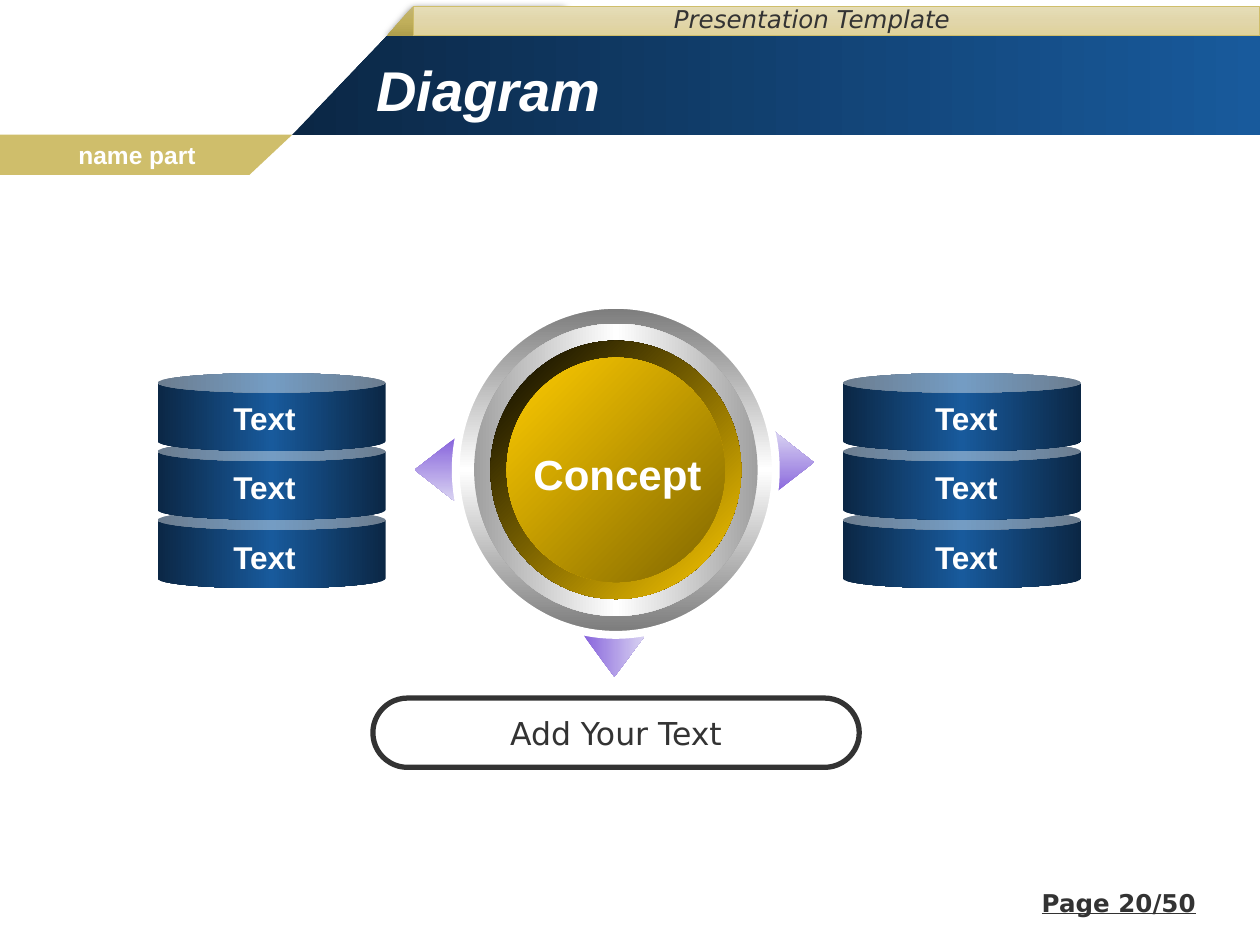
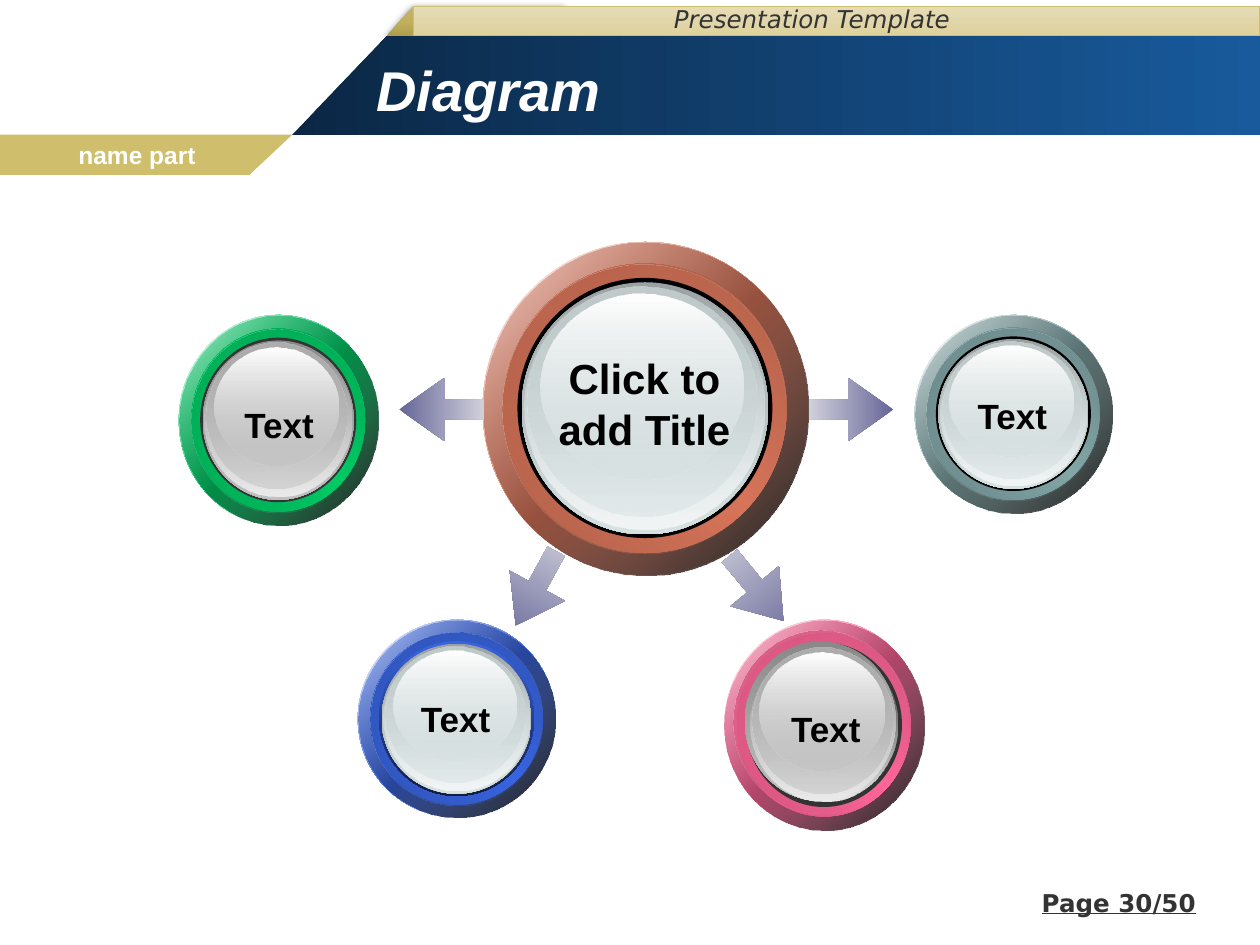
from lxml import etree
from pptx import Presentation
from pptx.dml.color import RGBColor
from pptx.enum.shapes import MSO_SHAPE as Preset
from pptx.enum.text import MSO_ANCHOR as Anchor, PP_ALIGN as Align
from pptx.oxml import parse_xml
from pptx.oxml.ns import nsdecls, qn
from pptx.util import Pt

COLORS = {
    "white": "FFFFFF", "black": "000000", "ink": "333333",
    "navy": "0B2745", "blue": "185A9C",
    "sand": "CFBE6B", "fold_light": "C3B575", "fold": "C0AF5B", "fold_dark": "AF9F4C",
    "band_light": "E6DDB7", "band": "E1D6AA", "band_dark": "DFD29B",
    "violet": "8764DC", "lilac": "DAD4F2", "slate": "666699", "mist": "D0D0DB",
    "steel": "7A7A7A", "silver": "A0A0A0", "gold": "FFCC00", "bronze": "806600",
    "copper": "D8755A", "teal": "83A6A7", "pink": "FF6699", "green": "00CC66",
    "royal": "3965E1", "ice": "D6E1E2", "ash": "C0C0C0",
}
HEADING = {"name": "Arial", "bold": True}
BODY = {"name": "DejaVu Sans"}
LAYERS = [
    (0, 0, 100, 100),
    (0.2, 0.2, 100, 100),
    (6.3, 6.5, 87.2, 87),
    (6.2, 6.7, 87, 87),
    (10.7, 10.8, 78.4, 78.2),
    (12, 12.1, 75.8, 75.8),
    (12.9, 12.6, 73.9, 73.9),
    (13.9, 13.3, 70.4, 69.2),
    (17.8, 15.4, 62.5, 56),
]


def mix(color, other, share):
    pairs = zip(bytes.fromhex(color), bytes.fromhex(other))
    return "".join(f"{round(a + (b - a) * share):02X}" for a, b in pairs)


def shade(color, keep):
    return mix(color, COLORS["black"], 1 - keep)


def gradient(angle, *colors):
    stops = [c if isinstance(c, tuple) else (c, 100) for c in colors]
    return angle, stops


def set_fill(shape, fill):
    if isinstance(fill, str):
        shape.fill.solid()
        shape.fill.fore_color.rgb = RGBColor.from_string(fill)
        return
    angle, stops = fill
    step = 100000 // (len(stops) - 1)
    marks = "".join(
        f'<a:gs pos="{index * step}"><a:srgbClr val="{color}">'
        f'<a:alpha val="{opacity * 1000}"/></a:srgbClr></a:gs>'
        for index, (color, opacity) in enumerate(stops))
    geometry = shape._element.spPr[1]
    geometry.addnext(parse_xml(
        f'<a:gradFill {nsdecls("a")} rotWithShape="1"><a:gsLst>{marks}</a:gsLst>'
        f'<a:lin ang="{angle * 60000}" scaled="0"/></a:gradFill>'))


def finish(shape, fill, line=None, width=0):
    set_fill(shape, fill)
    shape.shadow.inherit = False
    if line:
        shape.line.color.rgb = RGBColor.from_string(line)
        shape.line.width = Pt(width)
    else:
        shape.line.fill.background()
    return shape


def add_preset(slide, preset, box, fill, adjust=(), rotation=0, line=None, width=0):
    shape = slide.shapes.add_shape(preset, *map(Pt, box))
    for index, value in enumerate(adjust):
        shape.adjustments[index] = value
    shape.rotation = rotation
    return finish(shape, fill, line, width)


def add_outline(slide, points, fill):
    points = [(Pt(x), Pt(y)) for x, y in points]
    builder = slide.shapes.build_freeform(*points[0], scale=1.0)
    builder.add_line_segments(points[1:], close=True)
    return finish(builder.convert_to_shape(), fill)


def write(shape, text, color, font, align=Align.LEFT, wrap=False, anchor=Anchor.TOP):
    frame = shape.text_frame
    frame.word_wrap = wrap
    frame.vertical_anchor = anchor
    frame.text = text
    for paragraph in frame.paragraphs:
        paragraph.alignment = align
        for name, value in font.items():
            setattr(paragraph.font, name, value)
        paragraph.font.color.rgb = RGBColor.from_string(color)


def add_text(slide, box, text, color, font, **layout):
    write(slide.shapes.add_textbox(*map(Pt, box)), text, color, font, **layout)


def add_fold(slide):
    fold = add_outline(
        slide, [(322.8, 20.7), (221, 20.7), (236, 3.6), (322.8, 3.6)],
        gradient(90, COLORS["fold_light"], COLORS["fold"], COLORS["fold_dark"]))
    effects = fold._element.spPr.find(qn("a:effectLst"))
    shadow = etree.SubElement(effects, qn("a:outerShdw"), blurRad=str(Pt(4.5)),
                              dist=str(Pt(1.5)), dir="5400000", rotWithShape="0")
    color = etree.SubElement(shadow, qn("a:srgbClr"), val=COLORS["black"])
    etree.SubElement(color, qn("a:alpha"), val="63000")


def add_frame(slide, title, page):
    white, ink = COLORS["white"], COLORS["ink"]
    add_outline(slide, [(0, 77), (167, 77), (142.5, 100), (0, 100)], COLORS["sand"])
    add_text(slide, (37.7, 76.3, 82, 24.5), "name part", white, {**HEADING, "size": Pt(14)})
    add_fold(slide)
    add_preset(slide, Preset.RECTANGLE, (236, 3.6, 484, 16.8),
               gradient(90, COLORS["band_light"], COLORS["band"], COLORS["band_dark"]),
               line=COLORS["sand"], width=0.5)
    add_outline(slide, [(167, 77), (720, 77), (720, 20.4), (221, 20.7)],
                gradient(0, COLORS["navy"], COLORS["blue"]))
    add_text(slide, (208, 28.8, 512, 44.6), title, white,
             {**HEADING, "size": Pt(32), "italic": True}, wrap=True, anchor=Anchor.MIDDLE)
    add_text(slide, (462.2, 504, 228.2, 25.2), f"Page {page}/50", ink,
             {**BODY, "size": Pt(14), "bold": True, "underline": True},
             align=Align.RIGHT, wrap=True)
    add_text(slide, (378, -1.4, 216, 25.2), "Presentation Template", ink,
             {**BODY, "size": Pt(14), "italic": True}, wrap=True)


def add_pointer(slide, box, rotation):
    pointer = add_preset(slide, Preset.UP_ARROW, box,
                         gradient(0, COLORS["violet"], COLORS["lilac"]),
                         (0.517, 1), rotation)
    pointer._element.spPr.xfrm.set("flipH", "1")


def add_rings(slide, center_x, center_y):
    white = COLORS["white"]
    steel, silver, gold = COLORS["steel"], COLORS["silver"], COLORS["gold"]
    rings = [
        (182.9, 188.6, gradient(90, steel, white, steel), white),
        (162, 167, gradient(0, silver, white, silver), None),
        (143.3, 147.6, gradient(45, COLORS["black"], gold), None),
        (124.6, 128.2, gradient(45, gold, COLORS["bronze"]), None),
    ]
    for width, height, fill, line in rings:
        box = (center_x - width / 2, center_y - height / 2, width, height)
        add_preset(slide, Preset.OVAL, box, fill, line=line, width=4.5)


def add_can_stack(slide, left, width, label_left):
    fill = gradient(0, COLORS["navy"], COLORS["blue"], COLORS["navy"])
    for level in reversed(range(3)):
        add_preset(slide, Preset.CAN, (left, 213.2 + 39.2 * level, width, 44.6), fill, (0.25,))
    for level in range(3):
        add_text(slide, (label_left, 224.7 + 39.5 * level, 51.8, 28.8), "Text",
                 COLORS["white"], {**HEADING, "size": Pt(18)}, align=Align.CENTER)


def add_button(slide, box, accent, glass, rim, shifts=()):
    left, top, width, height = box
    white, black = COLORS["white"], COLORS["black"]
    ring = shade(accent, 0.765)
    fills = [
        gradient(45, white, accent, white),
        gradient(45, (accent, 32), (black, 90)),
        gradient(315, ring, accent, ring),
        gradient(45, shade(accent, 0.82), (accent, 0)),
        rim,
        gradient(90, shade(glass, 0.715), glass),
        gradient(90, (glass, 0), mix(glass, white, 0.68)),
        gradient(90, shade(glass, 0.904), (glass, 48)),
        gradient(90, white, (glass, 38)),
    ]
    shifts = dict(shifts)
    for index, ((x, y, w, h), fill) in enumerate(zip(LAYERS, fills)):
        shift = shifts.get(index, 0)
        layer = (left + width * (x + shift) / 100, top + height * (y + shift) / 100,
                 width * w / 100, height * h / 100)
        add_preset(slide, Preset.OVAL, layer, fill)


def build_concept(slide):
    add_frame(slide, "Diagram", 20)
    add_pointer(slide, (230.4, 257, 36, 23), 270)
    add_pointer(slide, (435.6, 252.7, 36, 23), 90)
    add_pointer(slide, (333.4, 362.9, 35.3, 23.8), 180)
    add_rings(slide, 351.9, 268.5)
    add_can_stack(slide, 90, 130.3, 125.3)
    add_can_stack(slide, 481.7, 136.1, 526.3)
    add_text(slide, (297.4, 252.7, 110.9, 36), "Concept", COLORS["white"],
             {**HEADING, "size": Pt(24)}, align=Align.CENTER)
    pill = add_preset(slide, Preset.ROUNDED_RECTANGLE, (213.1, 398.9, 277.9, 39.6),
                      COLORS["white"], (0.5,), line=COLORS["ink"], width=3)
    write(pill, "Add Your Text", COLORS["ink"], {**BODY, "size": Pt(18)},
          align=Align.CENTER, anchor=Anchor.MIDDLE)


def build_hub(slide):
    add_frame(slide, "Diagram", 30)
    black, ink, ice, ash = (COLORS[name] for name in ("black", "ink", "ice", "ash"))
    royal = COLORS["royal"]
    add_button(slide, (275.8, 138.3, 185.8, 190.1), COLORS["copper"], ice, black)
    arrows = [(462.2, 216, 180), (282.2, 318.2, 298.6), (228.2, 216, 0), (408.2, 318.2, 230.3)]
    for left, top, rotation in arrows:
        add_preset(slide, Preset.LEFT_ARROW, (left, top, 48.2, 36),
                   gradient(0, COLORS["slate"], COLORS["mist"]), (0.312, 0.715), rotation)
    add_text(slide, (311.8, 198, 113, 64.8), "Click to\nadd Title", black,
             {**HEADING, "size": Pt(24)}, align=Align.CENTER)
    buttons = [
        ((522.7, 180, 113, 113), COLORS["teal"], ice, black, {}, (550.8, 221.8)),
        ((414, 354.2, 113.8, 120.2), COLORS["pink"], ash, ink, {3: -1.5, 5: -1.8},
         (444.2, 401)),
        ((102.2, 180, 113.8, 120.2), COLORS["green"], ash, ink, {}, (131.8, 226.8)),
        ((204.5, 354.2, 113, 113), royal, ice, gradient(90, royal, shade(royal, 0.29)), {},
         (232.6, 395.3)),
    ]
    for box, accent, glass, rim, shifts, label in buttons:
        add_button(slide, box, accent, glass, rim, shifts)
        add_text(slide, (*label, 55.4, 31), "Text", black,
                 {**HEADING, "size": Pt(20)}, align=Align.CENTER)


def main():
    presentation = Presentation()
    presentation.slide_width, presentation.slide_height = Pt(720), Pt(540)
    for build in (build_concept, build_hub):
        build(presentation.slides.add_slide(presentation.slide_layouts[6]))
    presentation.save("out.pptx")


if __name__ == "__main__":
    main()
